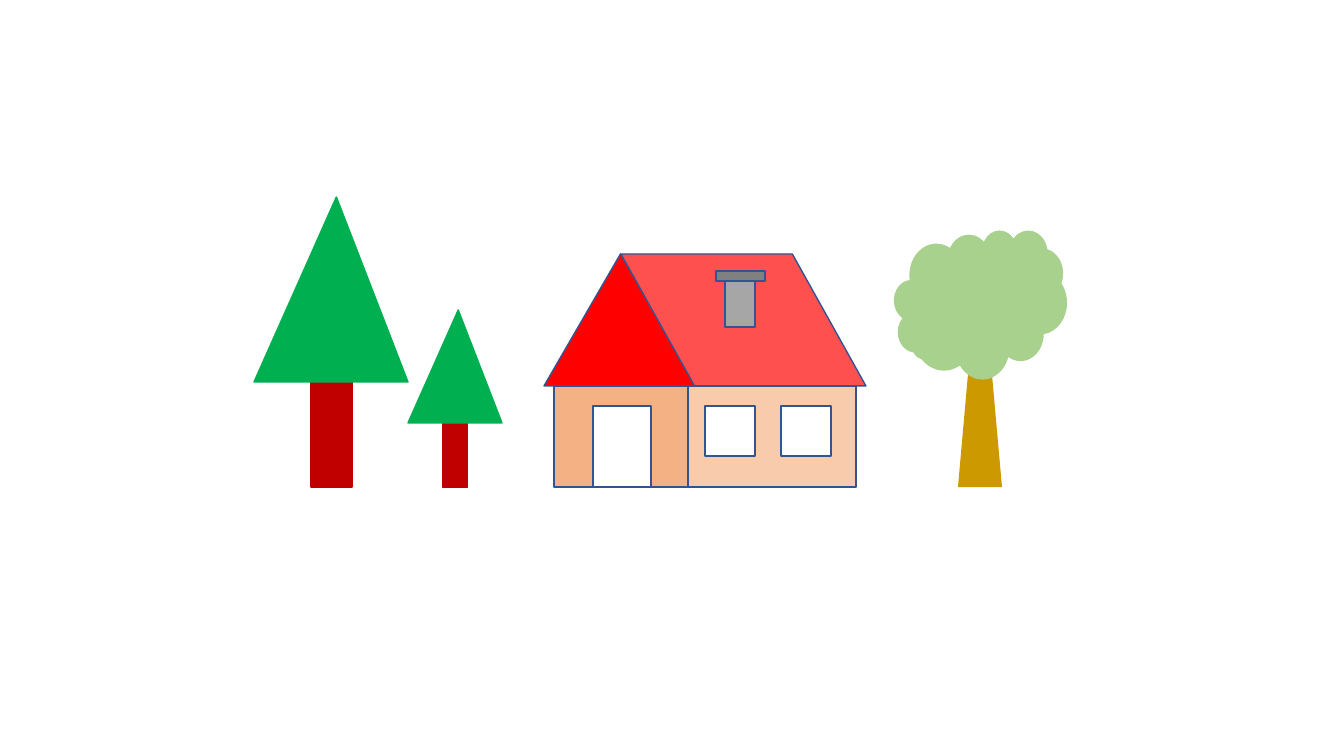
"""Draw a house between two fir trees and a leafy tree."""
from pptx import Presentation
from pptx.dml.color import RGBColor
from pptx.enum.shapes import MSO_SHAPE
from pptx.util import Pt

RECT = MSO_SHAPE.RECTANGLE
PEAK = MSO_SHAPE.ISOSCELES_TRIANGLE
SLANT = MSO_SHAPE.PARALLELOGRAM
TAPER = MSO_SHAPE.TRAPEZOID
CLOUD = MSO_SHAPE.CLOUD_CALLOUT

SIZE = (1344, 756)
EDGE = "325491"
WHITE = "FFFFFF"
BARK, LEAF = "C00000", "00B050"

FIRS = [(254, 197, 1), (408, 310, 0.61)]
FIR = [
    (RECT, (57, 157, 41, 133), BARK, BARK, []),
    (PEAK, (0, 0, 154, 185), LEAF, LEAF, [0.535]),
]
WINDOW = (705, 406, 50, 50)
STEP = 76
HOUSE = [
    (PEAK, (544, 254, 153, 132), "FF0000", EDGE, []),
    (SLANT, (621, 254, 245, 132), "FF5050", EDGE, [0.558]),
    (RECT, (554, 386, 134, 101), "F4B183", EDGE, []),
    (RECT, (688, 386, 168, 101), "F8CBAD", EDGE, []),
    *[(RECT, (WINDOW[0] + i * STEP, *WINDOW[1:]), WHITE, EDGE, [])
      for i in range(2)],
    (RECT, (593, 406, 58, 81), WHITE, EDGE, []),
    (RECT, (725, 281, 30, 46), "A6A6A6", EDGE, []),
    (RECT, (716, 271, 49, 10), "808080", EDGE, []),
]
OAK = [
    (TAPER, (958, 363, 44, 124), "CC9900", None, []),
    (CLOUD, (894, 230, 173, 149), "A9D18E", None, [-0.182, 0.161]),
]


def emu(px):
    return round(px * 914400 / 100.8)


def color(code):
    return RGBColor.from_string(code)


def draw(group, kind, box, fill, edge, bends):
    shape = group.shapes.add_shape(kind, *map(emu, box))
    shape.shadow.inherit = False
    shape.fill.solid()
    shape.fill.fore_color.rgb = color(fill)
    if edge:
        shape.line.color.rgb = color(edge)
        shape.line.width = Pt(1)
    else:
        shape.line.fill.background()
    for i, bend in enumerate(bends):
        shape.adjustments[i] = bend
    if kind == SLANT:
        shape._element.spPr.xfrm.set("flipH", "1")


def place(part, left, top, scale):
    kind, (x, y, w, h), *style = part
    box = (left + x * scale, top + y * scale, w * scale, h * scale)
    return kind, box, *style


def main():
    deck = Presentation()
    deck.slide_width, deck.slide_height = map(emu, SIZE)
    slide = deck.slides.add_slide(deck.slide_layouts[6])
    firs = [[place(part, *spot) for part in FIR] for spot in FIRS]
    for parts in (*firs, HOUSE, OAK):
        group = slide.shapes.add_group_shape()
        for part in parts:
            draw(group, *part)
    deck.save("out.pptx")


if __name__ == "__main__":
    main()
